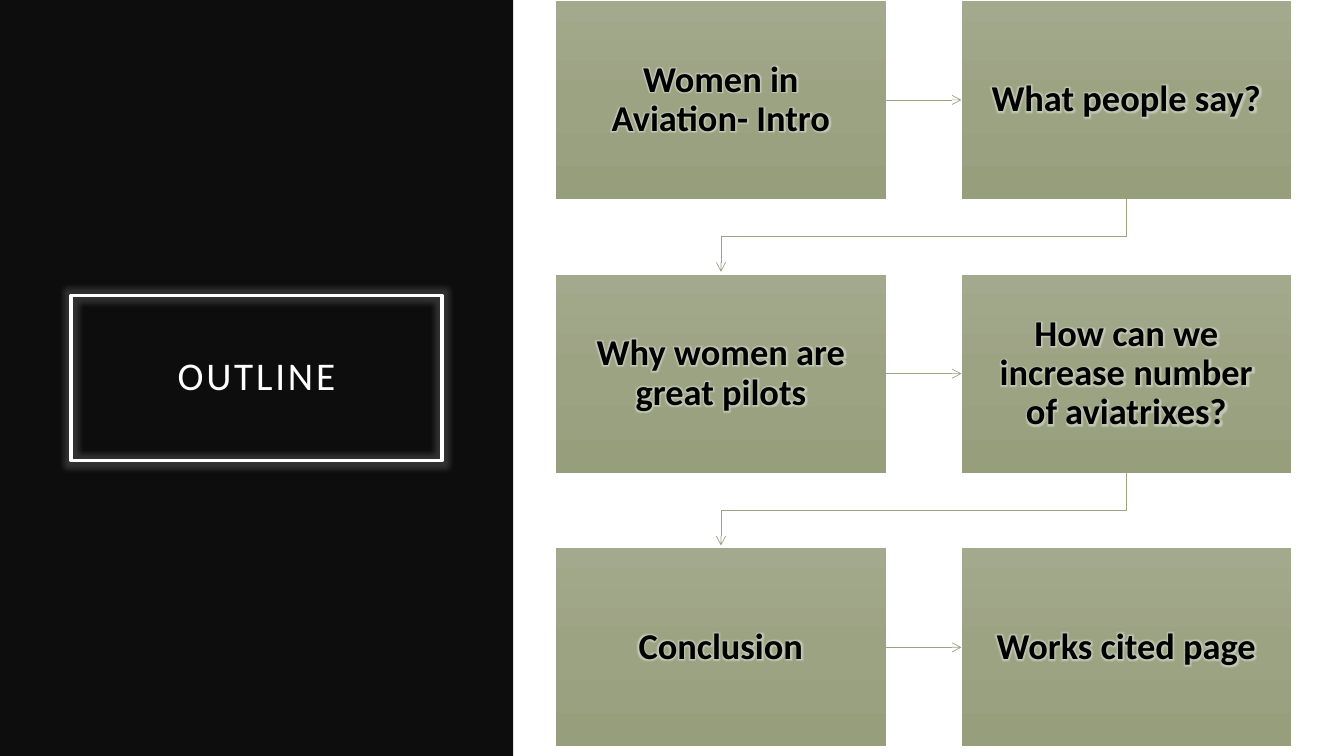
from copy import deepcopy
from dataclasses import dataclass

from lxml import etree
from pptx import Presentation
from pptx import util as u
from pptx.dml import color
from pptx.enum import shapes, text
from pptx.oxml import ns


@dataclass(frozen=True)
class Theme:
    """Colours, font and type sizes of the slide."""
    panel: str = "0D0D0D"
    white: str = "FFFFFF"
    ink: str = "000000"
    arrow: str = "9CA383"
    gradient: tuple = ("A3A98C", "9CA383", "979E7C")
    font: str = "Calibri"
    title_size: int = 28
    step_size: int = 26


THEME = Theme()
STEPS = [
    "Women in Aviation- Intro", "What people say?",
    "Why women are great pilots", "How can we increase number of aviatrixes?",
    "Conclusion", "Works cited page",
]


def rgb(value):
    """Turn a hex string into a colour."""
    return color.RGBColor.from_string(value)


def add_glow(effects, radius, alpha):
    """Put a white glow into an effect list."""
    glow = etree.SubElement(effects, ns.qn("a:glow"), rad=str(u.Pt(radius)))
    tint = etree.SubElement(glow, ns.qn("a:srgbClr"), val=THEME.white)
    etree.SubElement(tint, ns.qn("a:alpha"), val=str(alpha * 1000))


def write_centred(shape, words, size, ink, bold):
    """Fill a shape with one centred run and return the run."""
    frame = shape.text_frame
    frame.word_wrap = True
    frame.auto_size = text.MSO_AUTO_SIZE.NONE
    frame.vertical_anchor = text.MSO_ANCHOR.MIDDLE
    frame.margin_left = frame.margin_right = u.Pt(14.4)
    frame.margin_top = frame.margin_bottom = u.Pt(14.4)
    paragraph = frame.paragraphs[0]
    paragraph.alignment = text.PP_ALIGN.CENTER
    paragraph.line_spacing = 0.9
    run = paragraph.add_run()
    run.text = words
    run.font.size = u.Pt(size)
    run.font.bold = bold
    run.font.color.rgb = rgb(ink)
    run.font.name = THEME.font
    return run


def style_arrow(arrow):
    """Give a connector or open outline the thin arrow style."""
    arrow.line.color.rgb = rgb(THEME.arrow)
    arrow.line.width = u.Pt(0.5)
    etree.SubElement(arrow.line._get_or_add_ln(), ns.qn("a:tailEnd"), type="arrow")


def add_title_panel(slide, left, top, width, height):
    """Draw the dark panel with the framed title in its middle."""
    panel = slide.shapes.add_shape(
        shapes.MSO_SHAPE.RECTANGLE, u.Pt(left), u.Pt(top), u.Pt(width), u.Pt(height))
    panel.shadow.inherit = False
    panel.fill.solid()
    panel.fill.fore_color.rgb = rgb(THEME.panel)
    panel.line.fill.background()

    title = slide.shapes.title
    frame_width, frame_height = 265, 118
    title.left = u.Pt(left + (width - frame_width) / 2)
    title.top = u.Pt(top + (height - frame_height) / 2)
    title.width, title.height = u.Pt(frame_width), u.Pt(frame_height)
    title.fill.background()
    title.line.color.rgb = rgb(THEME.white)
    title.line.width = u.Pt(2.5)
    title.shadow.inherit = False
    add_glow(title._element.spPr.find(ns.qn("a:effectLst")), 8, 15)
    run = write_centred(title, "OUTLINE", THEME.title_size, THEME.white, False)
    run.font._element.set("spc", "200")
    slide.shapes._spTree.append(title._element)


def add_step(slide, words, left, top, width, height):
    """Draw one step box with glowing text."""
    step = slide.shapes.add_shape(
        shapes.MSO_SHAPE.RECTANGLE, u.Pt(left), u.Pt(top), u.Pt(width), u.Pt(height))
    step.shadow.inherit = False
    step.line.fill.background()
    step.fill.gradient()
    step.fill.gradient_angle = 270
    first = step.fill.gradient_stops[0]._gs
    first.addnext(deepcopy(first))
    for stop, position, shade in zip(step.fill.gradient_stops, (0, 0.5, 1), THEME.gradient):
        stop.position = position
        stop.color.rgb = rgb(shade)
    run = write_centred(step, words, THEME.step_size, THEME.ink, True)
    effects = etree.Element(ns.qn("a:effectLst"))
    add_glow(effects, 5, 40)
    run.font._element.find(ns.qn("a:solidFill")).addnext(effects)
    return step


def add_side_arrow(slide, start, end):
    """Join two neighbouring steps with a straight arrow."""
    arrow = slide.shapes.add_connector(shapes.MSO_CONNECTOR.STRAIGHT, 0, 0, 0, 0)
    arrow.begin_connect(start, 3)
    arrow.end_connect(end, 1)
    style_arrow(arrow)
    etree.SubElement(arrow._element.spPr, ns.qn("a:effectLst"))


def add_return_arrow(slide, start, end):
    """Lead from the end of one row to the start of the next."""
    from_x, to_x = start.left + start.width // 2, end.left + end.width // 2
    from_y = start.top + start.height
    middle_y = (from_y + end.top) // 2
    outline = slide.shapes.build_freeform(from_x, from_y)
    outline.add_line_segments(
        [(from_x, middle_y), (to_x, middle_y), (to_x, end.top - u.Pt(2))], close=False)
    arrow = outline.convert_to_shape()
    arrow.shadow.inherit = False
    arrow.fill.background()
    style_arrow(arrow)


def add_step_flow(slide, left, top, width, height):
    """Lay the steps out in two columns and link them in order."""
    step_width, step_height, columns = 235.6, 141.4, 2
    rows = len(STEPS) // columns
    pitch_x = (width - step_width) / (columns - 1)
    pitch_y = (height - step_height) / (rows - 1)
    steps = [
        add_step(slide, words, left + index % columns * pitch_x,
                 top + index // columns * pitch_y, step_width, step_height)
        for index, words in enumerate(STEPS)
    ]
    for index, (start, end) in enumerate(zip(steps, steps[1:]), 1):
        link = add_return_arrow if index % columns == 0 else add_side_arrow
        link(slide, start, end)


def main():
    """Build and save the outline slide."""
    deck = Presentation()
    deck.slide_width, deck.slide_height = u.Pt(960), u.Pt(540)
    slide = deck.slides.add_slide(deck.slide_layouts[5])
    add_title_panel(slide, 0, 0, 366.5, 540)
    add_step_flow(slide, 397.2, 0.7, 525.2, 532.4)
    deck.save("out.pptx")


if __name__ == "__main__":
    main()
